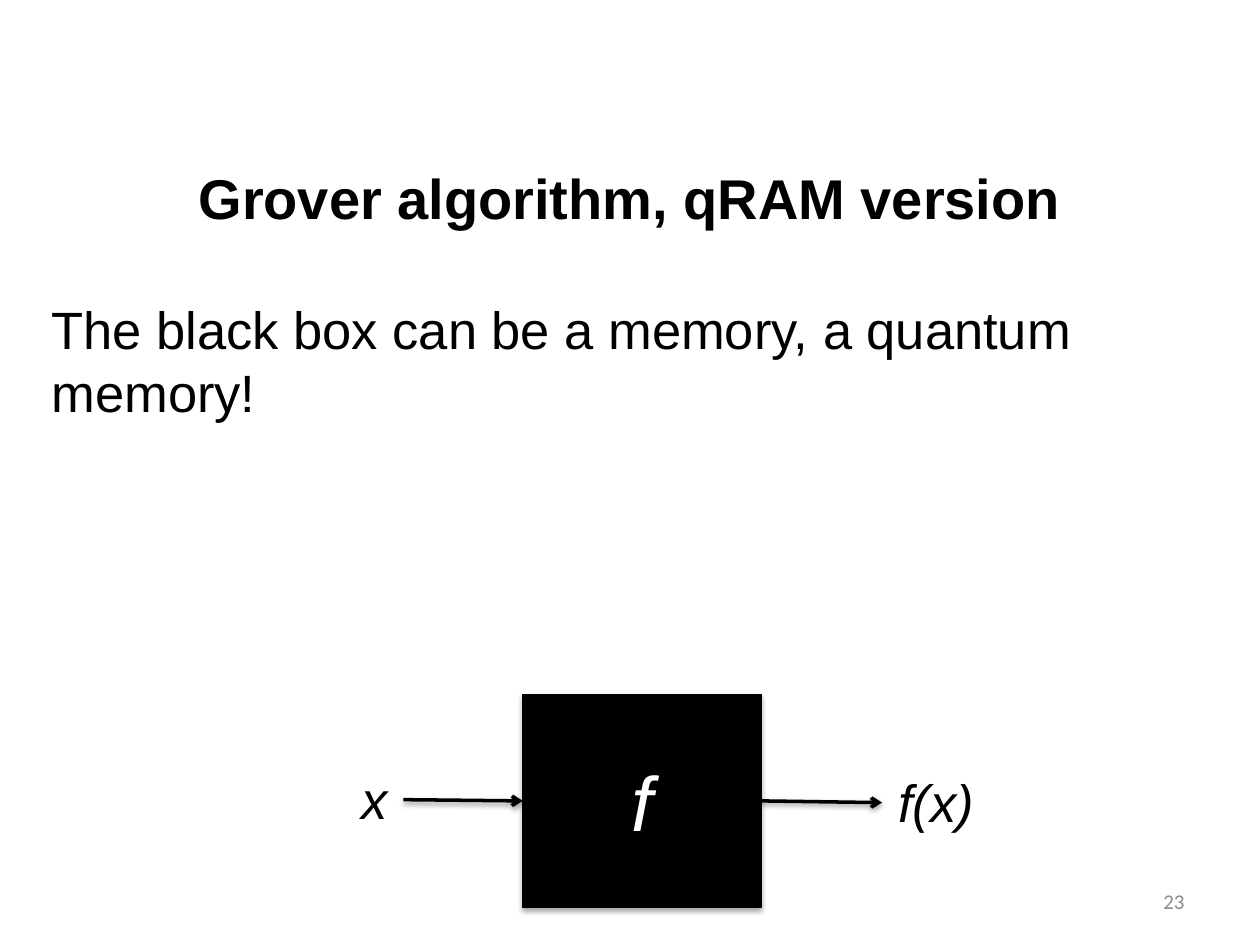
from lxml.etree import SubElement
from pptx import Presentation
from pptx.dml.color import RGBColor
from pptx.enum.shapes import MSO_CONNECTOR as Connector, MSO_SHAPE as Shape
from pptx.enum.text import MSO_ANCHOR as Anchor, PP_ALIGN as Align
from pptx.oxml.ns import qn
from pptx.util import Cm, Pt

COLORS = {"ink": "000000", "paper": "FFFFFF", "number": "8C8C8C"}


def color(name):
    return RGBColor.from_string(COLORS[name])


def write(shape, text, size=30, font="Arial", ink="ink", bold=False, italic=False,
          align=Align.LEFT, anchor=Anchor.TOP, wrap=True):
    frame = shape.text_frame
    frame.word_wrap = wrap
    frame.vertical_anchor = anchor
    para = frame.paragraphs[0]
    para.alignment = align
    span = para.add_run()
    span.text = text
    span.font.size = Pt(size)
    span.font.name = font
    span.font.bold = bold
    span.font.italic = italic
    span.font.color.rgb = color(ink)


deck = Presentation()
deck.slide_width, deck.slide_height = Cm(25.4), Cm(19.05)
page = deck.slides.add_slide(deck.slide_layouts[5])
shapes = page.shapes

title = shapes.title
title.left, title.top, title.width, title.height = Cm(1.27), Cm(2.49), Cm(22.86), Cm(2.97)
write(title, "Grover algorithm, qRAM version", size=32, bold=True,
      align=Align.CENTER, anchor=Anchor.MIDDLE)

# Black box
black_box = shapes.add_shape(Shape.RECTANGLE, Cm(10.54), Cm(14), Cm(4.8), Cm(4.29))
black_box.fill.solid()
black_box.fill.fore_color.rgb = color("ink")
black_box.line.color.rgb = color("ink")
black_box.line.width = Pt(0.75)
write(black_box, "f", size=44, ink="paper", italic=True,
      align=Align.CENTER, anchor=Anchor.MIDDLE)

# Arrows into and out of the box
input_arrow = shapes.add_connector(Connector.STRAIGHT, Cm(8.13), Cm(16.12), Cm(10.54), Cm(16.14))
input_arrow.end_connect(black_box, 1)
output_arrow = shapes.add_connector(Connector.STRAIGHT, Cm(15.34), Cm(16.14), Cm(17.78), Cm(16.18))
output_arrow.begin_connect(black_box, 3)
for arrow in (input_arrow, output_arrow):
    arrow.line.color.rgb = color("ink")
    arrow.line.width = Pt(2)
    SubElement(arrow.line._get_or_add_ln(), qn("a:tailEnd"), type="arrow")

# Soft shadows straight below
for shape, opacity in ((black_box, 35), (input_arrow, 38), (output_arrow, 38)):
    effects = SubElement(shape._element.spPr, qn("a:effectLst"))
    shadow = SubElement(effects, qn("a:outerShdw"), blurRad=str(Pt(3.1)), dist=str(Pt(1.7)),
                        dir="5400000", rotWithShape="0")
    shade = SubElement(shadow, qn("a:srgbClr"), val=COLORS["ink"])
    SubElement(shade, qn("a:alpha"), val=str(opacity * 1000))

# Text boxes: left, top, width, height in cm
for place, text, style in (
    ((7.04, 15.34, 1.3, 1.55), "x", {"italic": True, "wrap": False}),
    ((17.86, 15.39, 2.31, 1.55), "f(x)", {"italic": True, "wrap": False}),
    ((0.79, 5.87, 23.34, 4.11), "The black box can be a memory, a quantum memory!", {}),
    ((18.21, 17.65, 5.92, 1.02), "23", {"size": 12, "font": "Calibri", "ink": "number",
                                        "align": Align.RIGHT, "anchor": Anchor.MIDDLE}),
):
    box = shapes.add_textbox(*map(Cm, place))
    write(box, text, **style)

deck.save("out.pptx")
